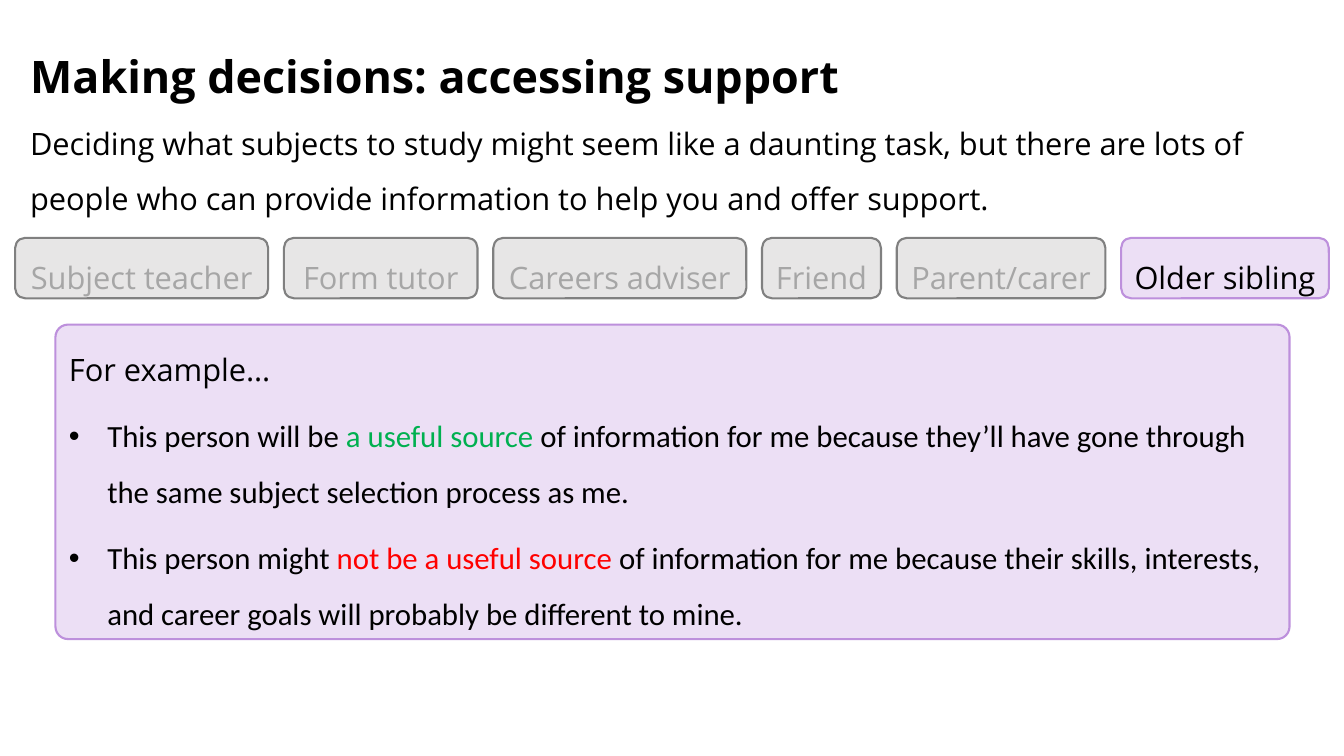
from lxml import etree
from pptx import Presentation
from pptx.dml.color import RGBColor
from pptx.enum.shapes import MSO_SHAPE
from pptx.enum.text import MSO_ANCHOR, MSO_AUTO_SIZE, PP_ALIGN
from pptx.oxml.ns import qn
from pptx.util import Inches, Pt

ROUND = MSO_SHAPE.ROUNDED_RECTANGLE
LEFT, CENTER = PP_ALIGN.LEFT, PP_ALIGN.CENTER

# Content
BLACK, GREEN, RED, MUTED = "000000", "00B050", "FF0000", "A6A6A6"
LILAC = ("ECDFF5", "BD90DC")
GREY = ("E7E6E6", "808080")

TITLE = "Making decisions: accessing support"
INTRO = ("Deciding what subjects to study might seem like a daunting task, but there are "
         "lots of people who can provide information to help you and offer support.")
PEOPLE = [("Subject teacher", 2.51), ("Form tutor", 1.92), ("Careers adviser", 2.51),
          ("Friend", 1.18), ("Parent/carer", 2.07), ("Older sibling", 2.06)]
CURRENT = "Older sibling"
EXAMPLE = "For example…"
POINTS = [
    [("This person will be ", BLACK), ("a useful source ", GREEN),
     ("of information for me because they’ll have gone through the same subject "
      "selection process as me.", BLACK)],
    [("This person might ", BLACK), ("not be a useful source ", RED),
     ("of information for me because their skills, interests, and career goals will "
      "probably be different to mine.", BLACK)],
]


def color(value):
    return RGBColor.from_string(value)


def write(p, runs, font="Open Sans", size=22, bold=False, align=LEFT, spacing=1.5):
    layout = {"alignment": align, "line_spacing": spacing,
              "space_before": Pt(0), "space_after": Pt(8)}
    for name, value in layout.items():
        setattr(p, name, value)
    for text, ink in runs:
        r = p.add_run()
        r.text = text
        for name, value in {"name": font, "size": Pt(size), "bold": bold}.items():
            setattr(r.font, name, value)
        r.font.color.rgb = color(ink)


def add_bullet(p):
    pPr = p._p.get_or_add_pPr()
    pPr.set("marL", str(Inches(0.38)))
    pPr.set("indent", str(Inches(-0.38)))
    etree.SubElement(pPr, qn("a:buFont")).set("typeface", "Arial")
    etree.SubElement(pPr, qn("a:buChar")).set("char", "•")


def frame(sp):
    tf = sp.text_frame
    for name, value in {"word_wrap": True, "auto_size": MSO_AUTO_SIZE.NONE,
                        "vertical_anchor": MSO_ANCHOR.MIDDLE}.items():
        setattr(tf, name, value)
    return tf


def add_box(s, x, y, w, h, scheme):
    sp = s.shapes.add_shape(ROUND, Inches(x), Inches(y), Inches(w), Inches(h))
    sp.shadow.inherit = False
    sp.fill.solid()
    sp.fill.fore_color.rgb = color(scheme[0])
    sp.line.color.rgb = color(scheme[1])
    sp.line.width = Pt(1.5)
    return sp


prs = Presentation()
prs.slide_width, prs.slide_height = Inches(13.33), Inches(7.5)
s = prs.slides.add_slide(prs.slide_layouts[5])

# Title and introduction
title = s.shapes.title
title.left, title.top, title.width, title.height = map(Inches, (0.2, 0.37, 12.49, 0.73))
write(frame(title).paragraphs[0], [(TITLE, BLACK)], size=32, bold=True, spacing=1.07)

intro = s.shapes.add_textbox(*map(Inches, (0.2, 0.96, 12.83, 1.28)))
write(frame(intro).paragraphs[0], [(INTRO, BLACK)])

# Example panel
panel = add_box(s, 0.55, 3.22, 12.24, 3.12, LILAC)
panel.adjustments[0] = 0.04
tf = frame(panel)
write(tf.paragraphs[0], [(EXAMPLE, BLACK)])
for runs in POINTS:
    p = tf.add_paragraph()
    add_bullet(p)
    write(p, runs, font="Calibri")

# Row of people, spread evenly between the row's two ends
x, row_end = 0.15, 13.18
gap = (row_end - x - sum(w for _, w in PEOPLE)) / (len(PEOPLE) - 1)
for person, w in PEOPLE:
    scheme, ink = (LILAC, BLACK) if person == CURRENT else (GREY, MUTED)
    sp = add_box(s, x, 2.36, w, 0.6, scheme)
    write(frame(sp).paragraphs[0], [(person, ink)], align=CENTER)
    x += w + gap

prs.save("out.pptx")
